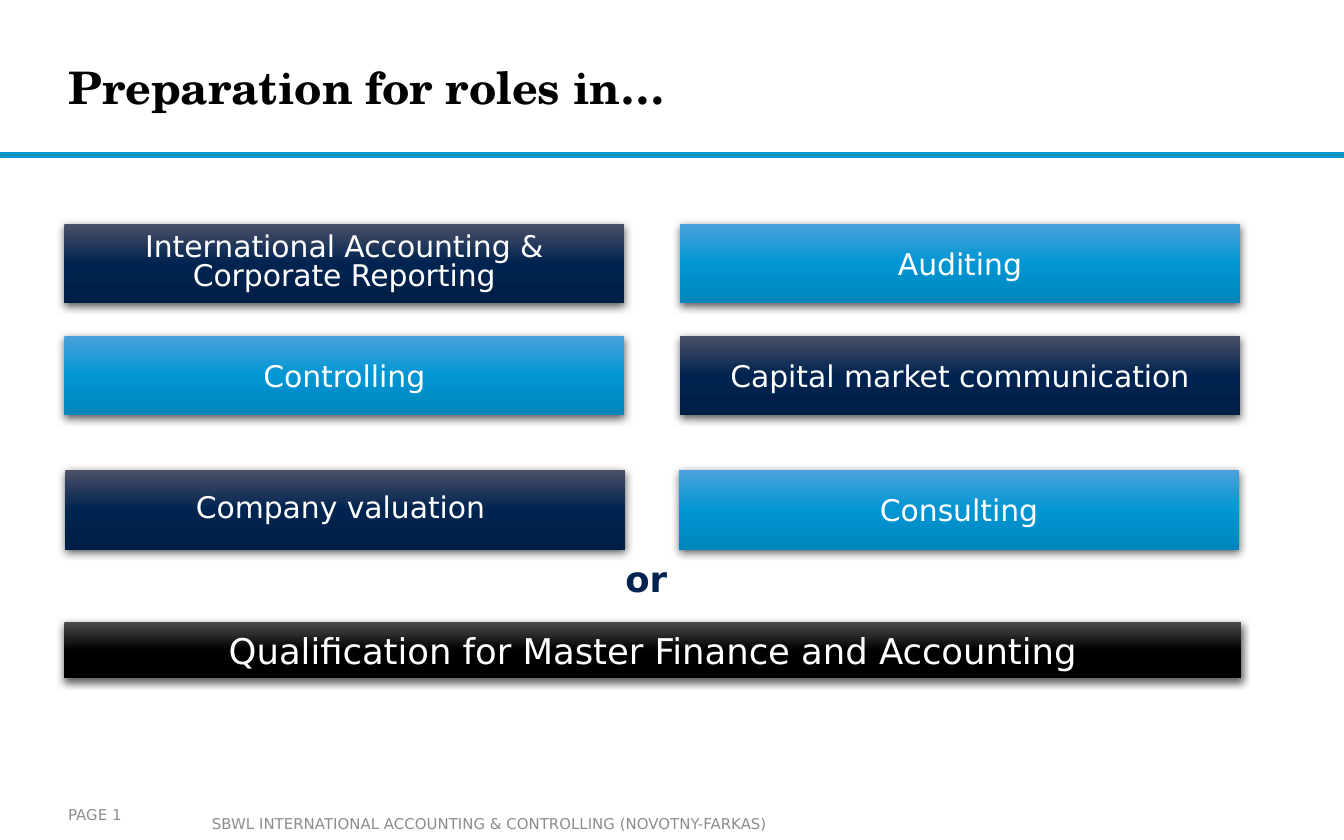
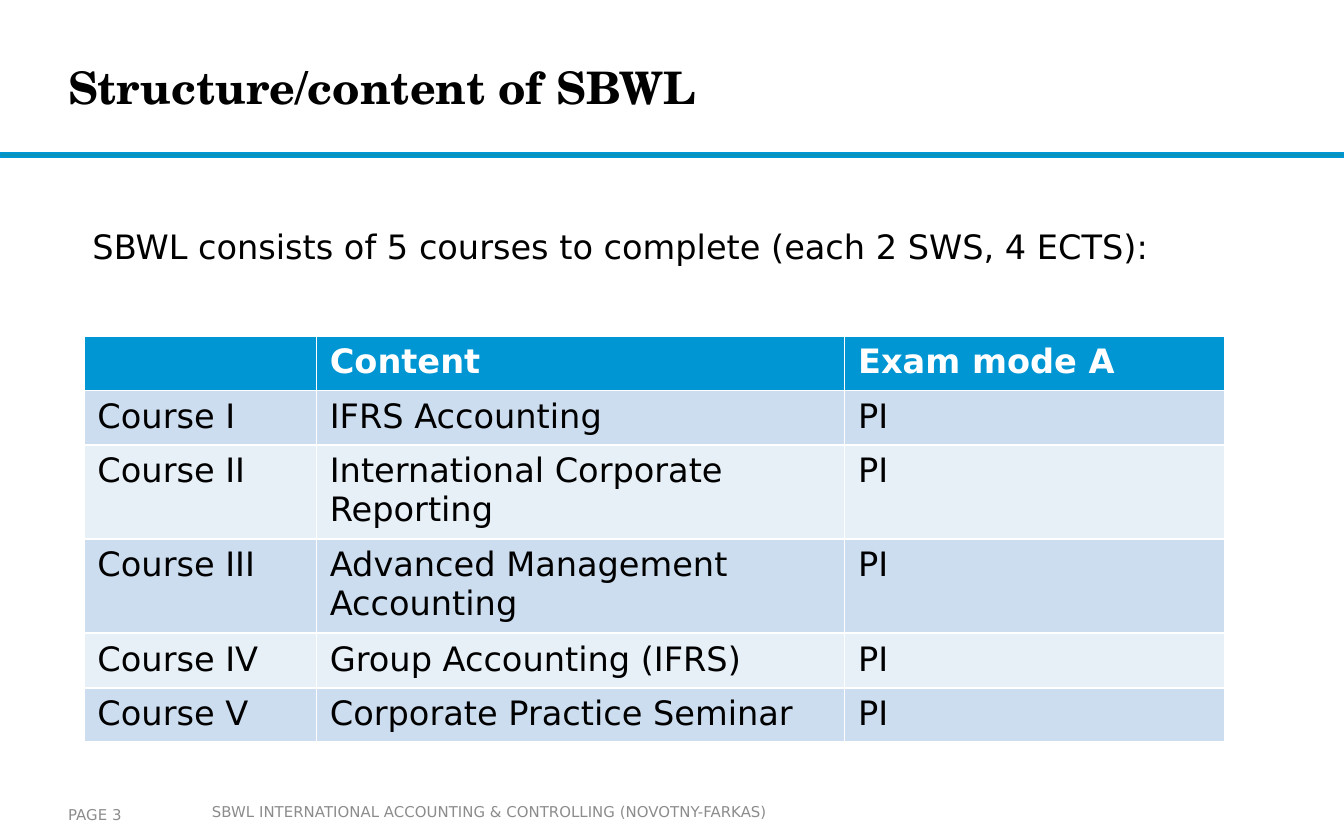
"""Builds two slides on the roles and the course structure of the SBWL."""
from copy import deepcopy

from lxml import etree
from pptx import Presentation
from pptx import util as u
from pptx.dml.color import RGBColor
from pptx.enum import shapes, text
from pptx.oxml.ns import qn

COLOURS = {
    "black": "000000", "white": "FFFFFF", "navy": "002350", "blue": "0096D3",
    "band": "0C94B7", "footer": "8C8C8C", "odd row": "CCDDEF", "even row": "E7EFF7",
}
GRADIENTS = {
    "navy": ["4B5068", "002350", "001F47"],
    "blue": ["4BA2DA", "0096D3", "0085BC"],
    "black": ["4B4B4B", "000000", "000000"],
}
BODY, HEADING = "DejaVu Sans", "TeX Gyre Schola"
MIDDLE = text.MSO_ANCHOR.MIDDLE
CENTRE = text.PP_ALIGN.CENTER


def write(frame, words, size, colour, bold=False, face=BODY):
    """Add one run to the first paragraph of a frame and return the paragraph."""
    paragraph = frame.paragraphs[0]
    run = paragraph.add_run()
    run.text = words
    run.font.size, run.font.bold, run.font.name = u.Pt(size), bold, face
    run.font.color.rgb = RGBColor.from_string(COLOURS[colour])
    return paragraph


def add_frame(slide, box, insets, anchor=MIDDLE):
    """Add a wrapping text box and return its frame."""
    frame = slide.shapes.add_textbox(*map(u.Pt, box)).text_frame
    frame.word_wrap = True
    frame.vertical_anchor = anchor
    frame.margin_left = frame.margin_right = u.Pt(insets[0])
    frame.margin_top = frame.margin_bottom = u.Pt(insets[1])
    return frame


deck = Presentation()
deck.slide_width, deck.slide_height = u.Pt(720), u.Pt(450)

pages = [
    ("Preparation for roles in…", "PAGE 1", 429),
    ("Structure/content of SBWL", "PAGE 3", 422.6),
]
slides = []
for title, page, footer_top in pages:
    slide = deck.slides.add_slide(deck.slide_layouts[6])
    band = slide.shapes.add_shape(
        shapes.MSO_SHAPE.RECTANGLE, u.Pt(0), u.Pt(82), u.Pt(720), u.Pt(2.2))
    band.shadow.inherit = False
    band.fill.solid()
    band.fill.fore_color.rgb = RGBColor.from_string(COLOURS["band"])
    band.line.color.rgb = RGBColor.from_string(COLOURS["blue"])
    band.line.width = u.Pt(1)
    write(add_frame(slide, (36.5, 10.8, 538.5, 71.3), (0, 0)),
          title, 24, "black", True, HEADING)
    write(add_frame(slide, (106.5, footer_top, 460, 24), (7.2, 3.6)),
          "SBWL INTERNATIONAL ACCOUNTING & CONTROLLING (NOVOTNY-FARKAS)", 8, "footer")
    write(add_frame(slide, (36.5, 426.2, 70.5, 20.2), (0, 3.6)), page, 8, "footer")
    slides.append(slide)
roles, structure = slides

bars = [
    ("International Accounting & Corporate Reporting", "navy", 34.5, 120, 300, 42.5, 16, 0.8),
    ("Auditing", "blue", 364.3, 120, 300, 42.5, 16, 1),
    ("Controlling", "blue", 34.5, 180, 300, 42.5, 16, 1),
    ("Capital market communication", "navy", 364.3, 180, 300, 42.5, 16, 1),
    ("Company valuation ", "navy", 35, 252, 300, 42.5, 16, 0.8),
    ("Consulting", "blue", 363.8, 252, 300, 42.5, 16, 1),
    ("Qualification for Master Finance and Accounting", "black", 34.5, 333.5, 630.5, 30, 19, 1),
]
for words, gradient, left, top, width, height, size, spacing in bars:
    bar = roles.shapes.add_shape(
        shapes.MSO_SHAPE.RECTANGLE, u.Pt(left), u.Pt(top), u.Pt(width), u.Pt(height))
    bar.line.fill.background()
    bar.fill.gradient()
    bar.fill.gradient_angle = 270
    first_stop = bar._element.spPr.find(".//" + qn("a:gs"))
    first_stop.addnext(deepcopy(first_stop))
    for stop, position, colour in zip(bar.fill.gradient_stops, (0, 0.5, 1), GRADIENTS[gradient]):
        stop.position = position
        stop.color.rgb = RGBColor.from_string(colour)
    bar.shadow.inherit = False
    effects = bar._element.spPr.find(qn("a:effectLst"))
    shadow = etree.SubElement(
        effects, qn("a:outerShdw"), blurRad=str(u.Pt(4.5)), dist=str(u.Pt(1.5)),
        dir="5400000", algn="ctr", rotWithShape="0")
    tint = etree.SubElement(shadow, qn("a:srgbClr"), val=COLOURS["black"])
    etree.SubElement(tint, qn("a:alpha"), val="63000")
    bar.text_frame.word_wrap = True
    bar.text_frame.vertical_anchor = MIDDLE
    label = write(bar.text_frame, words, size, "white")
    label.alignment = CENTRE
    label.line_spacing = spacing

alternative = add_frame(roles, (242, 295, 215, 35), (0, 3.6), text.MSO_ANCHOR.TOP)
write(alternative, "or ", 19, "navy", True).alignment = CENTRE

write(add_frame(structure, (42.5, 117.4, 607, 28.8), (7.2, 3.6), text.MSO_ANCHOR.TOP),
      "SBWL consists of 5 courses to complete (each 2 SWS, 4 ECTS):", 18, "black")

courses = [
    ("", "Content", "Exam mode A"),
    ("Course I", "IFRS Accounting", "PI"),
    ("Course II", "International Corporate Reporting", "PI"),
    ("Course III", "Advanced Management Accounting", "PI"),
    ("Course IV", "Group Accounting (IFRS)", "PI"),
    ("Course V", "Corporate Practice Seminar", "PI"),
]
widths = (124.5, 283, 203.5)
row_height = 29.2
plan = structure.shapes.add_table(
    len(courses), len(widths), u.Pt(45), u.Pt(180),
    u.Pt(sum(widths)), u.Pt(row_height * len(courses))).table
for column, width in zip(plan.columns, widths):
    column.width = u.Pt(width)
for number, course in enumerate(courses):
    header = number == 0
    fill = "blue" if header else "odd row" if number % 2 else "even row"
    plan.rows[number].height = u.Pt(row_height)
    for cell, words in zip(plan.rows[number].cells, course):
        cell.fill.solid()
        cell.fill.fore_color.rgb = RGBColor.from_string(COLOURS[fill])
        if words:
            write(cell.text_frame, words, 18, "white" if header else "black", header)

deck.save("out.pptx")
